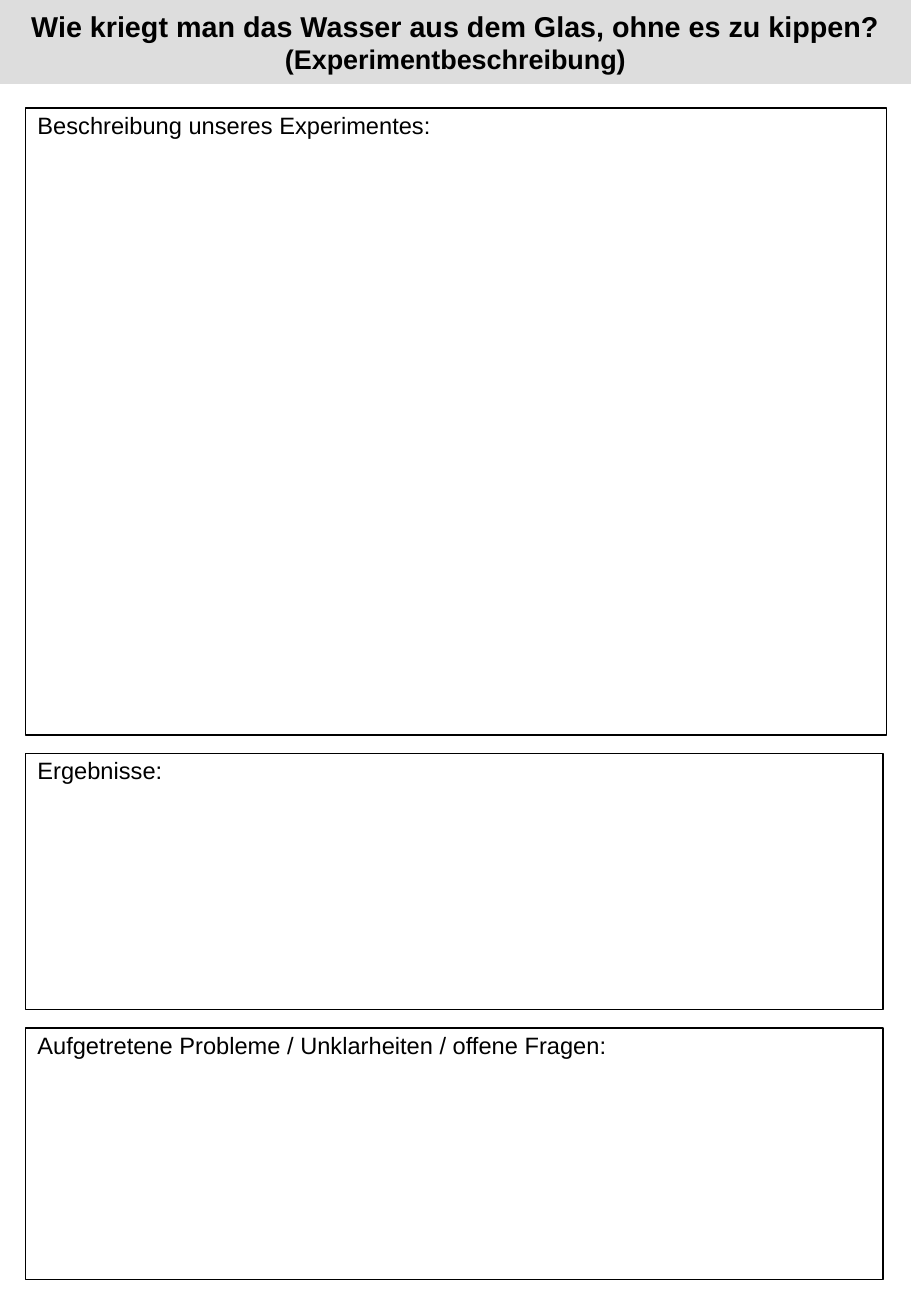
from pptx import Presentation
from pptx.dml.color import RGBColor
from pptx.enum.shapes import MSO_SHAPE
from pptx.enum.text import MSO_ANCHOR, PP_ALIGN
from pptx.util import Inches, Pt

WIDTH, HEIGHT = 7.5, 10.83
BLACK, GREY = "000000", "DDDDDD"
LEFT = 0.21

TITLE_LINES = [
    ("Wie kriegt man das Wasser aus dem Glas, ohne es zu kippen?", 17),
    ("(Experimentbeschreibung)", 16),
]
FIELDS = [  # label, top, width, height
    ("Beschreibung unseres Experimentes:", 0.89, 7.09, 5.16),
    ("Ergebnisse:", 6.2, 7.06, 2.11),
    ("Aufgetretene Probleme / Unklarheiten / offene Fragen:", 8.46, 7.06, 2.07),
]


def rgb(color):
    return RGBColor.from_string(color)


def add_rect(slide, box, anchor):
    sp = slide.shapes.add_shape(MSO_SHAPE.RECTANGLE, *map(Inches, box))
    sp.shadow.inherit = False
    tf = sp.text_frame
    tf.word_wrap = True
    tf.vertical_anchor = anchor
    return sp


def add_run(p, text, size, bold=False):
    r = p.add_run()
    r.text = text
    r.font.color.rgb = rgb(BLACK)
    for name, value in {"name": "Arial", "size": Pt(size), "bold": bold}.items():
        setattr(r.font, name, value)


def add_title(slide, box):
    sp = add_rect(slide, box, MSO_ANCHOR.MIDDLE)
    sp.fill.solid()
    sp.fill.fore_color.rgb = rgb(GREY)
    sp.line.fill.background()
    p = sp.text_frame.paragraphs[0]
    p.alignment = PP_ALIGN.CENTER
    for i, (text, size) in enumerate(TITLE_LINES):
        if i:
            p.add_line_break()
        add_run(p, text, size, bold=True)


def add_field(slide, box, label):
    """Outlined writing area with its label at the top left."""
    sp = add_rect(slide, box, MSO_ANCHOR.TOP)
    sp.fill.background()
    sp.line.color.rgb = rgb(BLACK)
    sp.line.width = Pt(0.75)
    p = sp.text_frame.paragraphs[0]
    p.alignment = PP_ALIGN.LEFT
    p.line_spacing = 0.9
    add_run(p, label, 14)


def main():
    prs = Presentation()
    prs.slide_width, prs.slide_height = Inches(WIDTH), Inches(HEIGHT)
    slide = prs.slides.add_slide(prs.slide_layouts[6])
    add_title(slide, (0, 0, WIDTH, 0.69))
    for label, top, width, height in FIELDS:
        add_field(slide, (LEFT, top, width, height), label)
    prs.save("out.pptx")


if __name__ == "__main__":
    main()
